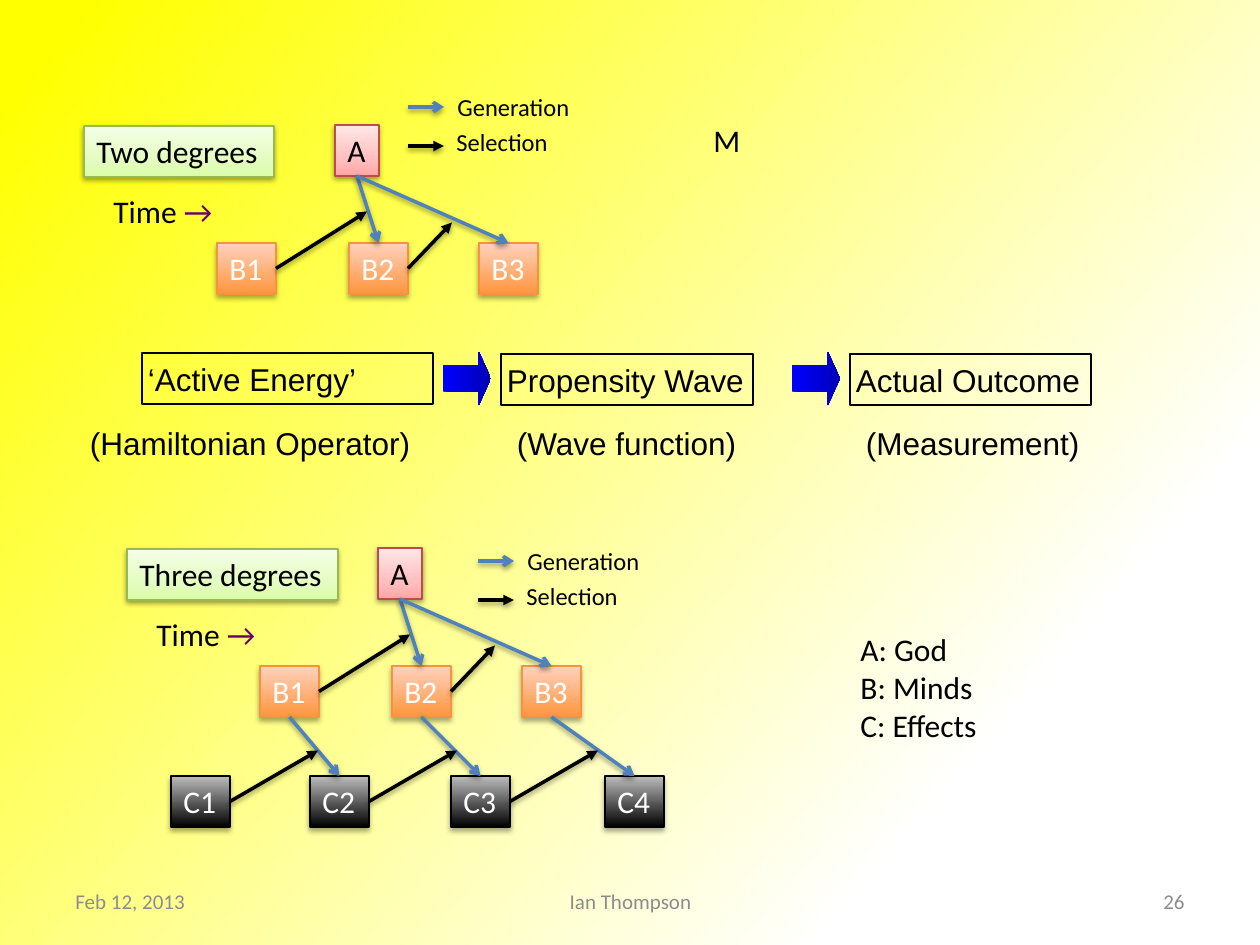
from typing import NamedTuple

from lxml.etree import SubElement
from pptx import Presentation
from pptx.dml.color import RGBColor
from pptx.enum.shapes import MSO_CONNECTOR as Connector, MSO_SHAPE as Preset
from pptx.enum.text import MSO_ANCHOR as Anchor, MSO_AUTO_SIZE as AutoSize, PP_ALIGN as Align
from pptx.oxml.ns import qn
from pptx.util import Pt

EMU_PER_PX = 914400 / 126
BLACK = RGBColor(0x00, 0x00, 0x00)
WHITE = RGBColor(0xFF, 0xFF, 0xFF)
YELLOW = RGBColor(0xFF, 0xFF, 0x00)
GREY = RGBColor(0x8C, 0x8C, 0x8C)
SILVER = RGBColor(0xBD, 0xBD, 0xBD)
STEEL = RGBColor(0x4F, 0x81, 0xBD)
PURPLE = RGBColor(0x66, 0x00, 0x66)
BLUE = RGBColor(0x00, 0x00, 0xFF)
NAVY = RGBColor(0x00, 0x00, 0xB6)
RED_EDGE = RGBColor(0xBF, 0x4C, 0x48)
ROSE, PINK, BLUSH = RGBColor(0xFF, 0xA6, 0xA5), RGBColor(0xFF, 0xC0, 0xBF), RGBColor(0xFF, 0xE7, 0xE7)
ORANGE_EDGE = RGBColor(0xF6, 0x92, 0x40)
ORANGE, PEACH = RGBColor(0xFF, 0x95, 0x3E), RGBColor(0xFF, 0xD2, 0xBD)
GREEN_EDGE = RGBColor(0x98, 0xB9, 0x55)
LIME, MINT, PALE = RGBColor(0xDA, 0xFD, 0xA7), RGBColor(0xE4, 0xFC, 0xC2), RGBColor(0xF5, 0xFF, 0xE7)


class Look(NamedTuple):
    """Fill stops, edge, text colour and shadow of one kind of node."""
    stops: tuple
    edge: RGBColor
    ink: RGBColor
    shadow_alpha: int = 38
    shadow_drop: float = 1.6


SOURCE = Look(((0, ROSE), (35, PINK), (100, BLUSH)), RED_EDGE, BLACK)
MIND = Look(((0, ORANGE), (100, PEACH)), ORANGE_EDGE, WHITE, 35, 1.8)
EFFECT = Look(((0, BLACK), (100, SILVER)), BLACK, WHITE, 35, 1.8)
TITLE = Look(((0, LIME), (35, MINT), (100, PALE)), GREEN_EDGE, BLACK)


def px(*lengths):
    """Turn pixel lengths into EMU."""
    return [round(length * EMU_PER_PX) for length in lengths]


def paint_gradient(fill, owner, stops, angle):
    """Give a fill the listed gradient stops and clockwise angle."""
    fill.gradient()
    gradient = owner.find(".//" + qn("a:gradFill"))
    gradient.find(qn("a:lin")).set("ang", str(angle * 60000))
    stop_list = gradient.find(qn("a:gsLst"))
    stop_list.clear()
    for position, color in stops:
        stop = SubElement(stop_list, qn("a:gs"), pos=str(position * 1000))
        SubElement(stop, qn("a:srgbClr"), val=str(color))


def cast_shadow(effects, alpha=38, drop=1.6):
    """Add a soft downward shadow to an effect list."""
    shadow = SubElement(effects, qn("a:outerShdw"), blurRad=str(Pt(3.1)), dist=str(Pt(drop)),
                        dir="5400000", rotWithShape="0")
    color = SubElement(shadow, qn("a:srgbClr"), val=str(BLACK))
    SubElement(color, qn("a:alpha"), val=str(alpha * 1000))


def write(holder, text, size=18, ink=BLACK, font="Calibri", align=Align.LEFT,
          anchor=Anchor.TOP, wrap=False, inset=None):
    """Fill a holder with text in one style."""
    frame = holder.text_frame
    frame.text = text
    frame.word_wrap = wrap
    frame.vertical_anchor = anchor
    frame.auto_size = AutoSize.NONE if wrap else AutoSize.SHAPE_TO_FIT_TEXT
    if inset is not None:
        frame.margin_left = frame.margin_right = frame.margin_top = frame.margin_bottom = px(inset)[0]
    for paragraph in frame.paragraphs:
        paragraph.alignment = align
        for run in paragraph.runs:
            run.font.size, run.font.name, run.font.color.rgb = Pt(size), font, ink


def add_text(shapes, text, x, y, width, height=51, **style):
    """Add a plain text box."""
    box = shapes.add_textbox(*px(x, y, width, height))
    write(box, text, **style)
    return box


def add_node(shapes, text, x, y, width, look):
    """Add a shaded, shadowed box with a label."""
    node = shapes.add_shape(Preset.RECTANGLE, *px(x, y, width, 51))
    paint_gradient(node.fill, node.element.spPr, look.stops, 270)
    node.line.color.rgb, node.line.width = look.edge, Pt(0.75)
    node.shadow.inherit = False
    cast_shadow(node.element.spPr.find(qn("a:effectLst")), look.shadow_alpha, look.shadow_drop)
    write(node, text, ink=look.ink)
    return node


def add_arrow(shapes, start, end, color, head):
    """Add a shadowed arrow between two EMU points."""
    arrow = shapes.add_connector(Connector.STRAIGHT, *start, *end)
    arrow.line.color.rgb, arrow.line.width = color, Pt(2)
    SubElement(arrow.line._get_or_add_ln(), qn("a:tailEnd"), type=head)
    cast_shadow(SubElement(arrow.element.spPr, qn("a:effectLst")))
    return arrow


def add_generation(shapes, parent, child):
    """Link a parent's foot to a child's top."""
    foot = parent.left + parent.width // 2, parent.top + parent.height
    top = child.left + child.width // 2, child.top
    arrow = add_arrow(shapes, foot, top, STEEL, "arrow")
    arrow.begin_connect(parent, 2)
    arrow.end_connect(child, 0)


def add_selection(shapes, node, dx, dy):
    """Point from a node's right side towards a generation arrow."""
    side = node.left + node.width, node.top + node.height // 2
    reach = px(dx, dy)
    arrow = add_arrow(shapes, side, (side[0] + reach[0], side[1] + reach[1]), BLACK, "triangle")
    arrow.begin_connect(node, 3)


def add_legend(shapes, x, y):
    """Explain the two kinds of arrow."""
    add_arrow(shapes, px(x, y), px(x + 36, y), STEEL, "arrow")
    add_text(shapes, "Generation", x + 37, y - 21, 139, 43, size=14)
    add_arrow(shapes, px(x, y + 39), px(x + 36, y + 39), BLACK, "triangle")
    add_text(shapes, "Selection", x + 36, y + 14, 117, 43, size=14)


def add_degrees(shapes, title, title_width, x, y):
    """Draw a source with its three minds and return the minds."""
    source = add_node(shapes, "A", x, y, 44, SOURCE)
    minds = [add_node(shapes, f"B{number}", x + dx, y + 118, 59, MIND)
             for number, dx in enumerate((-118, 14, 144), 1)]
    time = add_text(shapes, "Time ", x - 234, y + 61, 126)
    direction = time.text_frame.paragraphs[0].add_run()
    direction.text = "→"
    direction.font.size, direction.font.name, direction.font.color.rgb = Pt(18), "Calibri", PURPLE
    add_node(shapes, title, x - 251, y + 1, title_width, TITLE)
    for mind in minds[1:]:
        add_generation(shapes, source, mind)
    add_selection(shapes, minds[0], 91, -57)
    add_selection(shapes, minds[1], 44, -46)
    return minds


def add_effects(shapes, minds):
    """Draw the row of effects below the minds."""
    effects = [add_node(shapes, f"C{number}", x, 776, 59, EFFECT)
               for number, x in enumerate((171, 310, 451, 605), 1)]
    for mind, effect in zip(minds, effects[1:]):
        add_generation(shapes, mind, effect)
    for effect in effects[:-1]:
        add_selection(shapes, effect, 88, -51)


def add_stage(shapes, text, x, y, width):
    """Add an outlined stage of the physical process."""
    stage = shapes.add_shape(Preset.RECTANGLE, *px(x, y, width, 51))
    stage.fill.background()
    stage.line.color.rgb, stage.line.width = BLACK, Pt(0.75)
    stage.shadow.inherit = False
    write(stage, text, font="Arial", anchor=Anchor.MIDDLE, wrap=True, inset=6)


def add_step(shapes, x):
    """Add a block arrow between two stages."""
    step = shapes.add_shape(Preset.RIGHT_ARROW, *px(x, 352, 48, 53))
    step.adjustments[0], step.adjustments[1] = 0.5, 0.25
    paint_gradient(step.fill, step.element.spPr, ((0, BLUE), (100, NAVY)), 0)
    step.line.fill.background()
    step.shadow.inherit = False


def add_process(shapes):
    """Draw the row of stages with their captions."""
    for text, x, y, width in (("‘Active Energy’", 142, 353, 291),
                              ("Propensity Wave", 501, 354, 252),
                              ("Actual Outcome", 850, 354, 241)):
        add_stage(shapes, text, x, y, width)
    for x in (443, 792):
        add_step(shapes, x)
    for text, x, width in (("(Hamiltonian Operator)", 84, 336),
                           ("(Wave function)", 511, 253),
                           ("(Measurement)", 860, 228)):
        add_text(shapes, text, x, 417, width, font="Arial", anchor=Anchor.MIDDLE, wrap=True, inset=6)


def main():
    """Build and save the slide."""
    deck = Presentation()
    deck.slide_width, deck.slide_height = px(1260, 945)
    slide = deck.slides.add_slide(deck.slide_layouts[6])
    paint_gradient(slide.background.fill, slide.element, ((4, YELLOW), (79, WHITE)), 41)
    for text, x, width, align in (("Ian Thompson", 431, 399, Align.CENTER),
                                  ("26", 903, 294, Align.RIGHT),
                                  ("Feb 12, 2013", 63, 294, Align.LEFT)):
        add_text(slide.shapes, text, x, 876, width, 50, size=12, ink=GREY,
                 align=align, anchor=Anchor.MIDDLE, wrap=True)
    two, three, process = [slide.shapes.add_group_shape().shapes for _ in range(3)]
    add_degrees(two, "Two degrees", 190, 335, 125)
    add_legend(two, 408, 107)
    minds = add_degrees(three, "Three degrees", 211, 378, 548)
    add_legend(three, 478, 561)
    add_effects(three, minds)
    add_process(process)
    add_text(slide.shapes, "M", 701, 115, 53)
    add_text(slide.shapes, "A: God\nB: Minds\nC: Effects", 848, 624, 145, 127)
    deck.save("out.pptx")


if __name__ == "__main__":
    main()
